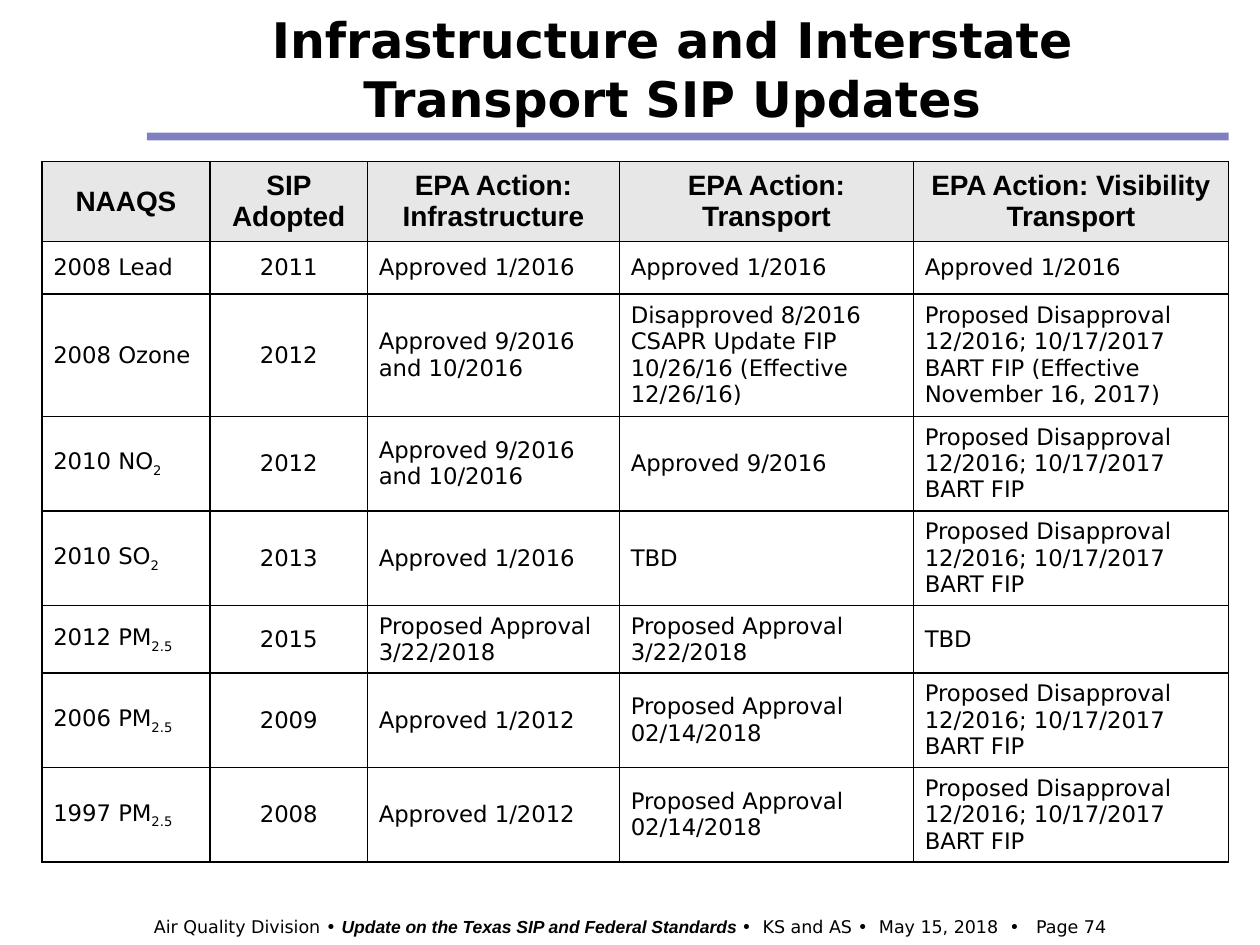
from typing import NamedTuple

from lxml import etree
from pptx import Presentation
from pptx.dml.color import RGBColor
from pptx.enum.shapes import MSO_CONNECTOR
from pptx.enum.text import MSO_ANCHOR, MSO_AUTO_SIZE, PP_ALIGN
from pptx.oxml import parse_xml
from pptx.oxml.ns import nsdecls, qn
from pptx.util import Inches, Pt

CENTER, LEFT = PP_ALIGN.CENTER, PP_ALIGN.LEFT
MIDDLE = MSO_ANCHOR.MIDDLE
NO_AUTOFIT = MSO_AUTO_SIZE.NONE
STRAIGHT = MSO_CONNECTOR.STRAIGHT

BLACK = RGBColor(0x00, 0x00, 0x00)
NAVY = RGBColor(0x00, 0x00, 0x86)
HEADER_GRAY = RGBColor(0xE7, 0xE7, 0xE7)
BODY_FONT, HEADER_FONT = "DejaVu Sans", "Arial"

# The slide is laid out on a grid of twelve units to the inch.
UNIT = Inches(1) // 12
COLUMN_UNITS = (16, 15, 24, 28, 30)
HEADER_UNITS = 7.6
TABLE_LEFT, TABLE_TOP = 4, 15.4

HEADERS = ("NAAQS", "SIP Adopted", "EPA Action: Infrastructure",
           "EPA Action: Transport", "EPA Action: Visibility Transport")
BART_FIP = "Proposed Disapproval 12/2016; 10/17/2017 BART FIP"


class Standard(NamedTuple):
    name: str
    subscript: str
    adopted: str
    infrastructure: str
    transport: str
    visibility: str
    units: float


STANDARDS = (
    Standard("2008 Lead", "", "2011", "Approved 1/2016", "Approved 1/2016",
             "Approved 1/2016", 5),
    Standard("2008 Ozone", "", "2012", "Approved 9/2016 and 10/2016",
             "Disapproved 8/2016\nCSAPR Update FIP 10/26/16 (Effective 12/26/16)",
             f"{BART_FIP} (Effective November 16, 2017)", 11.65),
    Standard("2010 NO", "2", "2012", "Approved 9/2016 and 10/2016",
             "Approved 9/2016", BART_FIP, 9),
    Standard("2010 SO", "2", "2013", "Approved 1/2016", "TBD", BART_FIP, 9),
    Standard("2012 PM", "2.5", "2015", "Proposed Approval 3/22/2018",
             "Proposed Approval 3/22/2018", "TBD", 6.4),
    Standard("2006 PM", "2.5", "2009", "Approved 1/2012",
             "Proposed Approval 02/14/2018", BART_FIP, 9),
    Standard("1997 PM", "2.5", "2008", "Approved 1/2012",
             "Proposed Approval 02/14/2018", BART_FIP, 9),
)


def units(count: float) -> int:
    return round(count * UNIT)


def style_font(font, name: str, size: float, bold: bool = False) -> None:
    font.name, font.size, font.bold = name, Pt(size), bold
    font.color.rgb = BLACK


def add_title(slide, text: str) -> None:
    title = slide.shapes.title
    title.left, title.top = units(19), units(1)
    title.width, title.height = units(90), units(11)
    frame = title.text_frame
    frame.text = text
    frame.word_wrap = True
    frame.auto_size = NO_AUTOFIT
    frame.vertical_anchor = MIDDLE
    para = frame.paragraphs[0]
    para.alignment = CENTER
    style_font(para.font, BODY_FONT, 28, bold=True)


def add_title_rule(slide) -> None:
    rule = slide.shapes.add_connector(
        STRAIGHT, units(14), units(13), units(117), units(13))
    rule.line.color.rgb = NAVY
    rule.line.width = Pt(4.5)
    properties = rule._element.spPr
    color = properties.find(".//" + qn("a:srgbClr"))
    etree.SubElement(color, qn("a:alpha")).set("val", "50000")
    etree.SubElement(properties, qn("a:effectLst"))


def add_borders(cell) -> None:
    properties = cell._tc.get_or_add_tcPr()
    for index, side in enumerate(("lnL", "lnR", "lnT", "lnB")):
        properties.insert(index, parse_xml(
            f'<a:{side} {nsdecls("a")} w="{Pt(1)}"><a:solidFill>'
            f'<a:srgbClr val="{BLACK}"/></a:solidFill></a:{side}>'))


def fill_cell(cell, text: str, centered: bool, header: bool = False) -> None:
    if header:
        cell.fill.solid()
        cell.fill.fore_color.rgb = HEADER_GRAY
    else:
        cell.fill.background()
    add_borders(cell)
    cell.vertical_anchor = MIDDLE
    cell.margin_left = cell.margin_right = Inches(0.09)
    cell.margin_top = cell.margin_bottom = Inches(0.05)
    cell.text = text
    for para in cell.text_frame.paragraphs:
        para.alignment = CENTER if centered else LEFT
        if header:
            style_font(para.font, HEADER_FONT, 16, bold=True)
        else:
            style_font(para.font, BODY_FONT, 13)


def add_subscript(cell, text: str) -> None:
    span = cell.text_frame.paragraphs[0].add_run()
    span.text = text
    span._r.get_or_add_rPr().set("baseline", "-25000")


def add_standards_table(slide) -> None:
    heights = [HEADER_UNITS] + [standard.units for standard in STANDARDS]
    table = slide.shapes.add_table(
        len(heights), len(COLUMN_UNITS), units(TABLE_LEFT), units(TABLE_TOP),
        units(sum(COLUMN_UNITS)), units(sum(heights))).table
    table.first_row = table.horz_banding = False
    for column, width in zip(table.columns, COLUMN_UNITS):
        column.width = units(width)
    for row, height in zip(table.rows, heights):
        row.height = units(height)

    for column, text in enumerate(HEADERS):
        fill_cell(table.cell(0, column), text, centered=True, header=True)
    for row, standard in enumerate(STANDARDS, start=1):
        texts = (standard.name, standard.adopted, standard.infrastructure,
                 standard.transport, standard.visibility)
        for column, text in enumerate(texts):
            fill_cell(table.cell(row, column), text, centered=column == 1)
        if standard.subscript:
            add_subscript(table.cell(row, 0), standard.subscript)


def add_footer(slide, page_width: int) -> None:
    box = slide.shapes.add_textbox(0, Inches(7.22), page_width, Inches(0.27))
    box.text_frame.word_wrap = True
    para = box.text_frame.paragraphs[0]
    para.alignment = CENTER
    for text, emphasized in (
            ("Air Quality Division • ", False),
            ("Update on the Texas SIP and Federal Standards ", True),
            ("•  KS and AS •  May 15, 2018  •   Page 74", False)):
        span = para.add_run()
        span.text = text
        style_font(span.font, HEADER_FONT if emphasized else BODY_FONT, 10,
                   bold=emphasized)
        span.font.italic = emphasized


def main() -> None:
    deck = Presentation()
    deck.slide_width, deck.slide_height = Inches(10), Inches(7.5)
    slide = deck.slides.add_slide(deck.slide_layouts.get_by_name("Title Only"))
    add_title_rule(slide)
    add_footer(slide, deck.slide_width)
    add_standards_table(slide)
    add_title(slide, "Infrastructure and Interstate Transport SIP Updates")
    deck.save("out.pptx")


if __name__ == "__main__":
    main()
